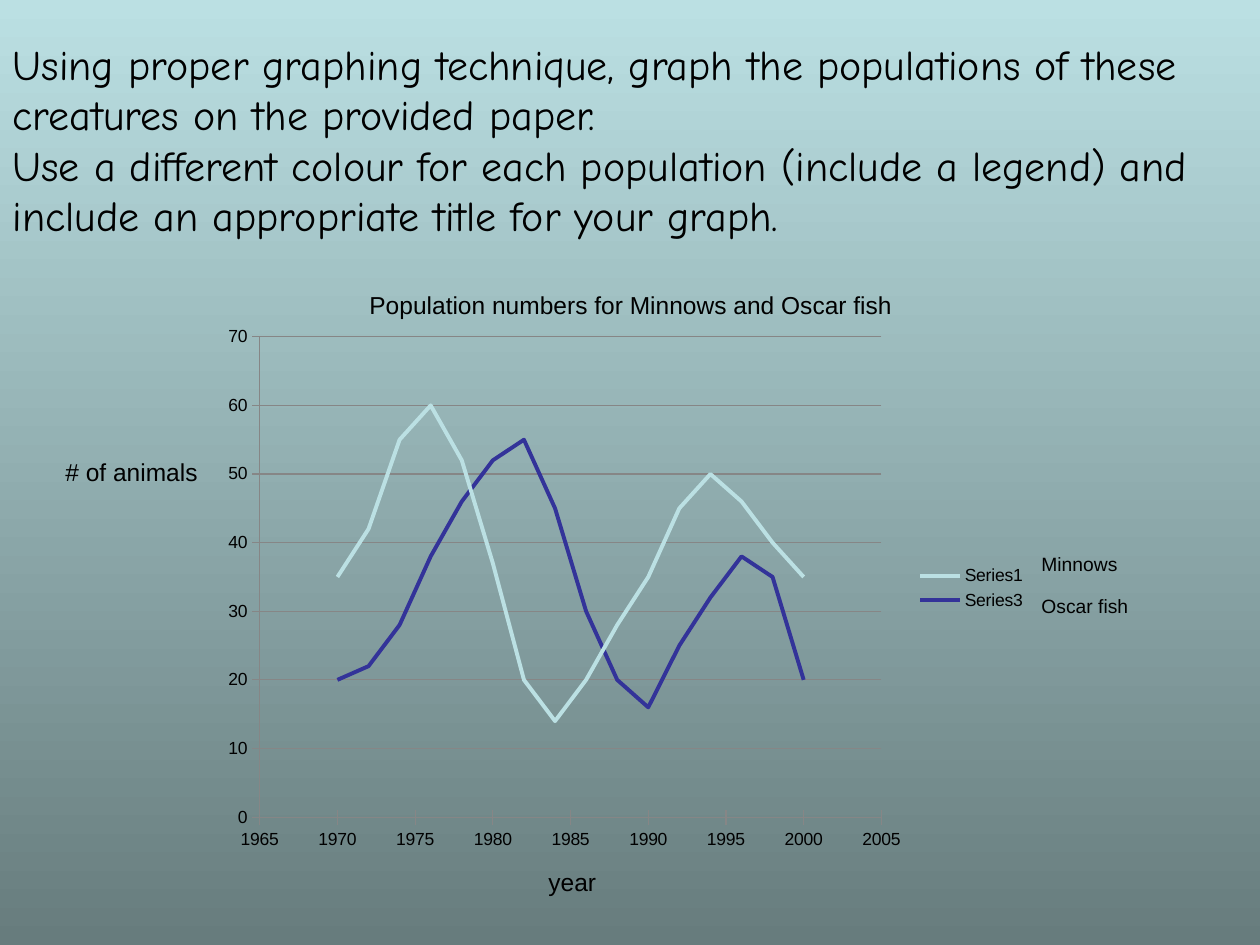
from lxml import etree
from pptx import Presentation
from pptx.chart.data import XyChartData
from pptx.dml.color import RGBColor
from pptx.enum.chart import XL_CHART_TYPE, XL_LEGEND_POSITION, XL_TICK_MARK
from pptx.enum.text import MSO_ANCHOR, MSO_AUTO_SIZE, PP_ALIGN
from pptx.oxml.ns import qn
from pptx.util import Emu, Pt

SMOOTH = XL_CHART_TYPE.XY_SCATTER_SMOOTH_NO_MARKERS
RIGHT = XL_LEGEND_POSITION.RIGHT
CROSS = XL_TICK_MARK.CROSS
MIDDLE = MSO_ANCHOR.MIDDLE
NO_FIT = MSO_AUTO_SIZE.NONE
LEFT = PP_ALIGN.LEFT

BLACK = RGBColor(0x00, 0x00, 0x00)
GREY = RGBColor(0x86, 0x86, 0x86)
PALE = RGBColor(0xBB, 0xE0, 0xE3)
SLATE = RGBColor(0x67, 0x7C, 0x7D)
NAVY = RGBColor(0x33, 0x33, 0x99)

TITLE = (
    "Using proper graphing technique, graph the populations of these "
    "creatures on the provided paper. \v"
    "Use a different colour for each population (include a legend) and "
    "include an appropriate title for your graph."
)
YEARS = range(1970, 2001, 2)
POPULATIONS = [
    ("Series1", PALE, [35, 42, 55, 60, 52, 37, 20, 14, 20, 28, 35, 45, 50, 46, 40, 35]),
    ("Series3", NAVY, [20, 22, 28, 38, 46, 52, 55, 45, 30, 20, 16, 25, 32, 38, 35, 20]),
]
PLOT_LAYOUT = {"x": 0.06, "y": 0.04, "w": 0.75, "h": 0.88}
LABELS = [
    ("Minnows", (1029, 546, 105, 35), 11),
    ("Oscar fish", (1029, 588, 158, 35), 11),
    ("Population numbers for Minnows and Oscar fish", (357, 284, 557, 42), 14),
    ("# of animals", (53, 451, 159, 43), 14),
    ("year", (536, 861, 126, 43), 14),
]


def px(n):
    return Emu(round(n * 914400 / 126))


class Deck:
    """Holds the style and the current slide."""

    font = "Arial"
    title_font = "Comic Neue"

    def __init__(self, width, height):
        self.prs = Presentation()
        self.prs.slide_width, self.prs.slide_height = px(width), px(height)
        self.s = self.prs.slides.add_slide(self.prs.slide_layouts[5])

    def background(self, top, bottom):
        fill = self.s.background.fill
        fill.gradient()
        fill.gradient_angle = 270
        for stop, color, position in zip(fill.gradient_stops, (top, bottom), (0, 1)):
            stop.color.rgb = color
            stop.position = position

    def style(self, font, name, size):
        font.name = name
        font.size = Pt(size)
        font.color.rgb = BLACK

    def fill_text(self, sp, text, name, size):
        tf = sp.text_frame
        tf.word_wrap = True
        tf.auto_size = NO_FIT
        p = tf.paragraphs[0]
        p.text = text
        p.alignment = LEFT
        for r in p.runs:
            self.style(r.font, name, size)

    def title(self, text, box, size):
        sp = self.s.shapes.title
        sp.left, sp.top, sp.width, sp.height = map(px, box)
        self.fill_text(sp, text, self.title_font, size)
        sp.text_frame.vertical_anchor = MIDDLE

    def label(self, text, box, size):
        sp = self.s.shapes.add_textbox(*map(px, box))
        self.fill_text(sp, text, self.font, size)

    def axis(self, axis, low, high, step, grid):
        axis.minimum_scale, axis.maximum_scale, axis.major_unit = low, high, step
        axis.major_tick_mark = CROSS
        axis.has_major_gridlines = grid
        lines = [axis.format.line]
        if grid:
            lines.append(axis.major_gridlines.format.line)
        for line in lines:
            line.color.rgb = GREY
            line.width = Pt(0.75)

    def plot_layout(self, chart, layout):
        plot = chart.element.find(".//" + qn("c:plotArea"))
        for old in plot.findall(qn("c:layout")):
            plot.remove(old)
        node = etree.Element(qn("c:layout"))
        manual = etree.SubElement(node, qn("c:manualLayout"))
        values = {"layoutTarget": "inner", "xMode": "edge", "yMode": "edge", **layout}
        for tag, value in values.items():
            etree.SubElement(manual, qn("c:" + tag)).set("val", str(value))
        plot.insert(0, node)

    def chart(self, xs, populations, box):
        data = XyChartData()
        for name, _, values in populations:
            series = data.add_series(name)
            for x, y in zip(xs, values):
                series.add_data_point(x, y)
        chart = self.s.shapes.add_chart(SMOOTH, *map(px, box), data).chart
        self.style(chart.font, self.font, 10)
        chart.has_title = False
        chart.has_legend = True
        chart.legend.position = RIGHT
        chart.legend.include_in_layout = False
        chart.plots[0].vary_by_categories = False
        for series, (_, color, _) in zip(chart.plots[0].series, populations):
            series.format.line.color.rgb = color
            series.format.line.width = Pt(2.25)
        self.axis(chart.category_axis, 1965, 2005, 5, False)
        self.axis(chart.value_axis, 0, 70, 10, True)
        self.plot_layout(chart, PLOT_LAYOUT)


def main():
    deck = Deck(1260, 945)
    deck.background(PALE, SLATE)
    deck.title(TITLE, (0, 32, 1218, 214), 24)
    deck.chart(YEARS, POPULATIONS, (210, 315, 829, 546))
    for text, box, size in LABELS:
        deck.label(text, box, size)
    deck.prs.save("out.pptx")


if __name__ == "__main__":
    main()
